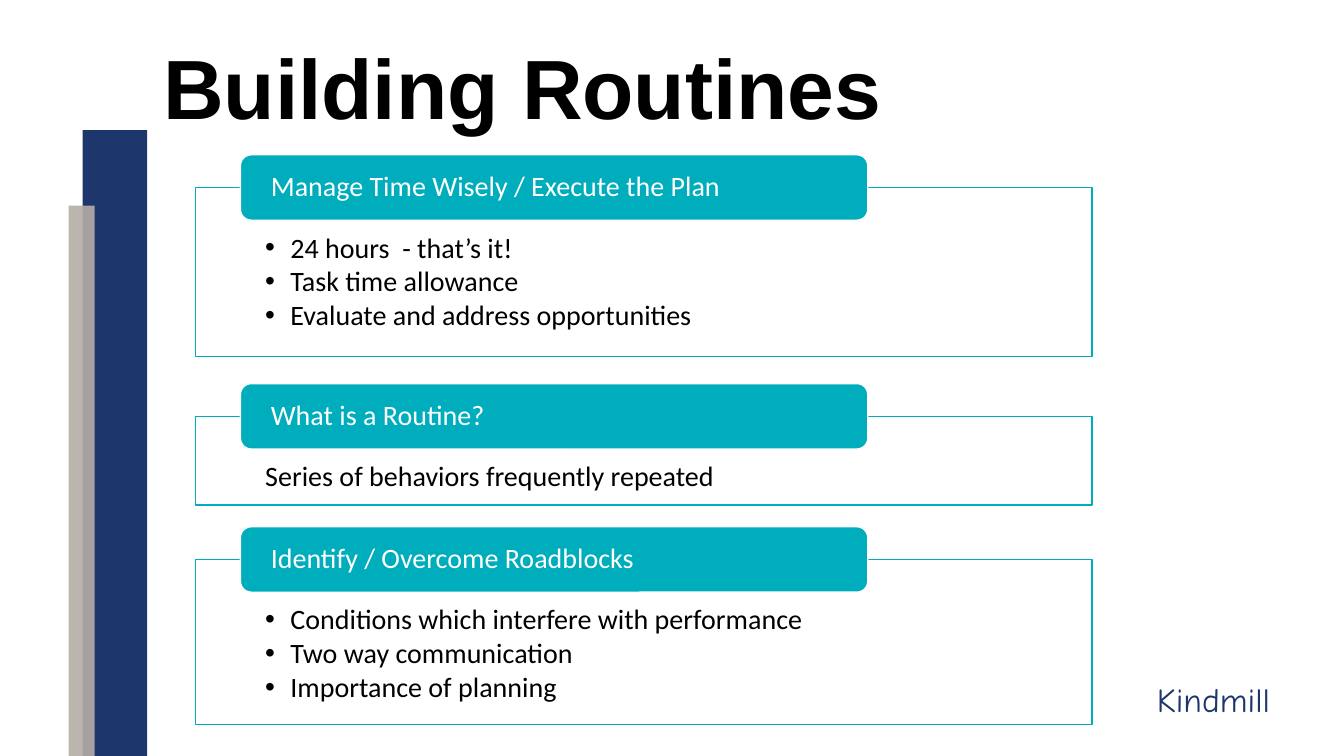
from pptx import Presentation
from pptx.dml.color import RGBColor
from pptx.enum.shapes import MSO_SHAPE as Kind
from pptx.enum.text import MSO_ANCHOR as Anchor, MSO_AUTO_SIZE as Fit, PP_ALIGN as Align
from pptx.oxml.ns import qn
from pptx.util import Inches, Pt
from lxml.etree import SubElement

TITLE = "Building Routines"
BRAND = "Kindmill"
CARDS = [
    ("Manage Time Wisely / Execute the Plan", 1.86, 1.68, True,
     ["24 hours  - that’s it!", "Task time allowance",
      "Evaluate and address opportunities"]),
    ("What is a Routine?", 4.13, 0.88, False,
     ["Series of behaviors frequently repeated"]),
    ("Identify / Overcome Roadblocks", 5.55, 1.64, True,
     ["Conditions which interfere with performance",
      "Two way communication", "Importance of planning"]),
]
HEX = {"navy": "1D376C", "sand": "B5ADA6", "teal": "00ADBC",
       "white": "FFFFFF", "black": "000000"}
WIDE, HIGH = 13.33, 7.5
LEFT, SPAN = 1.94, 8.89
TAB_W, TAB_H = SPAN * 0.7, 0.65
TAB_X = LEFT + SPAN * 0.05

deck = Presentation()
deck.slide_width, deck.slide_height = Inches(WIDE), Inches(HIGH)
slide = deck.slides.add_slide(deck.slide_layouts[6])


def tint(name):
    return RGBColor.from_string(HEX[name])


def write(shape, lines, size=20, font="Calibri", color="black", bold=False,
          align=Align.LEFT, anchor=Anchor.TOP, pad=(0.1, 0.05, 0.1, 0.05),
          lead=None, after=0, dots=False, fit=Fit.NONE):
    frame = shape.text_frame
    frame.word_wrap, frame.auto_size = True, fit
    frame.vertical_anchor = anchor
    (frame.margin_left, frame.margin_top,
     frame.margin_right, frame.margin_bottom) = map(Inches, pad)
    for i, line in enumerate(lines):
        para = frame.add_paragraph() if i else frame.paragraphs[0]
        para.alignment, para.space_after = align, Pt(after)
        para.line_spacing = lead
        if dots:
            props = para._p.get_or_add_pPr()
            props.set("marL", str(Inches(0.25)))
            props.set("indent", str(-Inches(0.25)))
            SubElement(props, qn("a:buFont")).set("typeface", "Arial")
            SubElement(props, qn("a:buChar")).set("char", "•")
        run = para.add_run()
        run.text = line
        run.font.size, run.font.name, run.font.bold = Pt(size), font, bold
        run.font.color.rgb = tint(color)


def label(box, text, **form):
    write(slide.shapes.add_textbox(*map(Inches, box)), [text],
          fit=Fit.SHAPE_TO_FIT_TEXT, **form)


def block(box, fill, line=None, kind=Kind.RECTANGLE, alpha=None):
    shape = slide.shapes.add_shape(kind, *map(Inches, box))
    shape.shadow.inherit = False
    shape.fill.solid()
    shape.fill.fore_color.rgb = tint(fill)
    if alpha:
        color = shape.fill._xPr.find(qn("a:solidFill"))[0]
        SubElement(color, qn("a:alpha")).set("val", str(alpha * 1000))
    if line:
        shape.line.color.rgb = tint(line)
        shape.line.width = Pt(1)
    else:
        shape.line.fill.background()
    return shape


label((10.94, 6.69, 2.19, 0.5), BRAND, size=24, font="Comic Neue",
      color="navy", align=Align.CENTER)
label((1.52, 0.4, WIDE - 1.52, 1.01), TITLE, size=60, font="Arial",
      bold=True, lead=Pt(65))
block((0.82, 1.29, 0.64, HIGH - 1.29), "navy")
block((0.68, 2.04, 0.26, HIGH - 2.04), "sand", alpha=90)

for head, top, tall, dots, lines in CARDS:
    body = block((LEFT, top, SPAN, tall), "white", "teal", alpha=90)
    write(body, lines, pad=(0.69, 0.46, 0.69, 0.16), lead=0.9, after=2.5,
          dots=dots)
    tab = block((TAB_X, top - TAB_H / 2, TAB_W, TAB_H), "teal", "white",
                Kind.ROUNDED_RECTANGLE)
    write(tab, [head], color="white", anchor=Anchor.MIDDLE,
          pad=(0.27, 0.03, 0.27, 0.03), lead=0.9)

deck.save("out.pptx")
